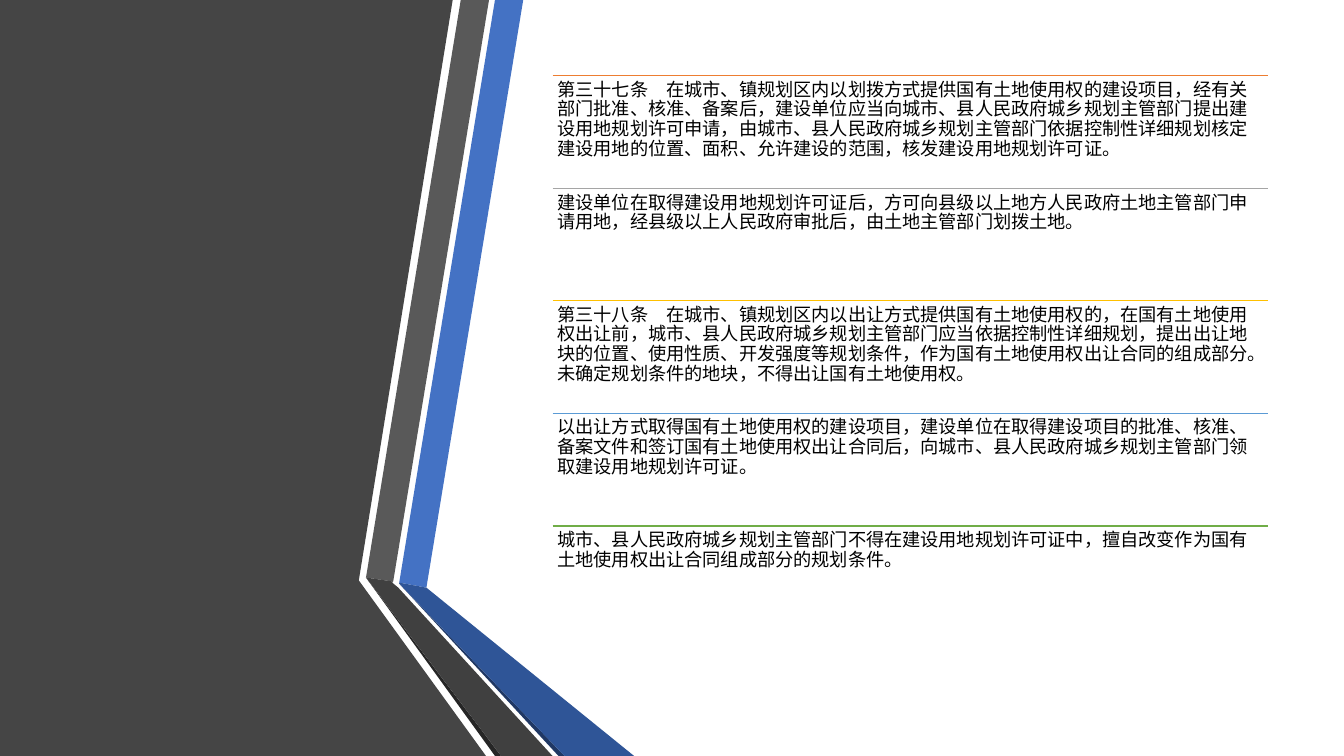
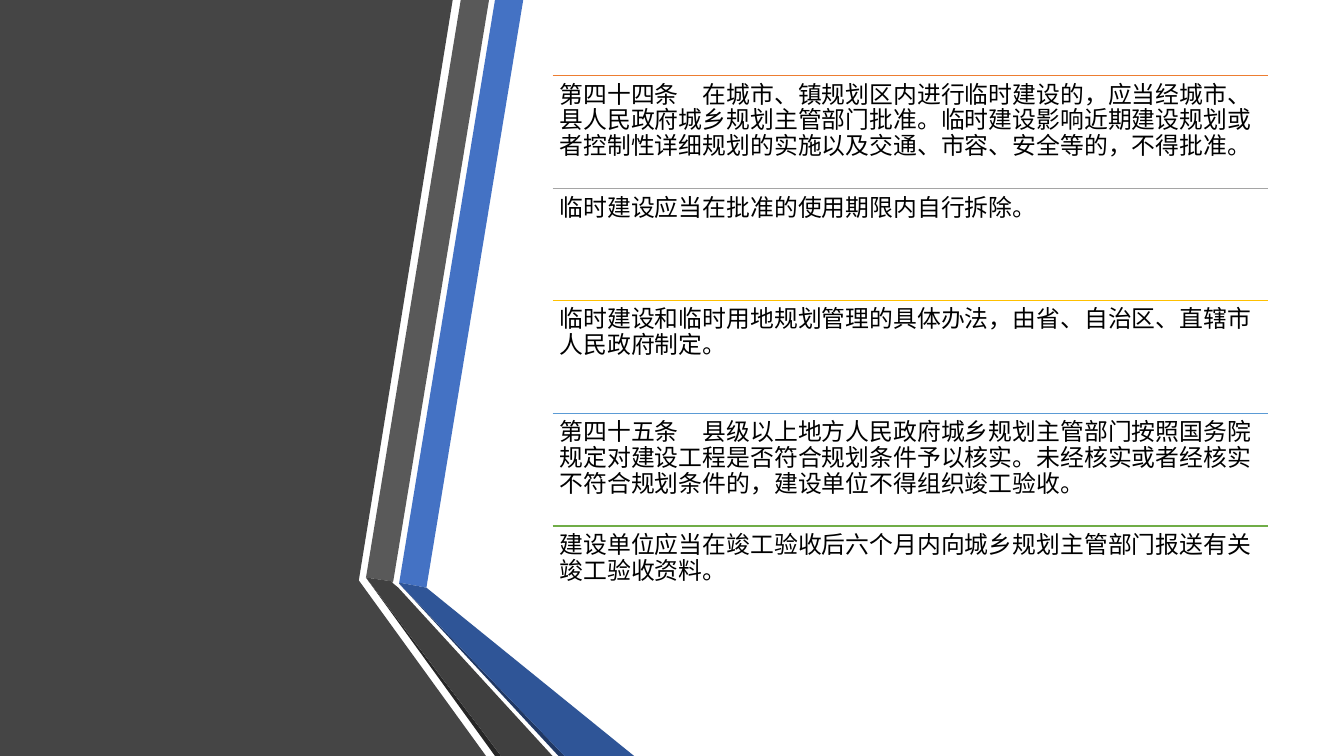
from lxml import etree
from pptx import Presentation
from pptx.dml.color import RGBColor
from pptx.enum.shapes import MSO_CONNECTOR
from pptx.enum.text import MSO_ANCHOR, PP_ALIGN
from pptx.oxml.ns import qn
from pptx.util import Pt

PX = 9144
STRAIGHT = MSO_CONNECTOR.STRAIGHT
TOP = MSO_ANCHOR.TOP
LEFT = PP_ALIGN.LEFT

SLIDE_W, SLIDE_H = 1333, 750
FONT = "Noto Sans CJK SC"
BLANK_LAYOUT = 6

COLORS = {
    "panel": "454545",
    "blue": "4472C4",
    "gray": "595959",
    "gray_edge": "262626",
    "blue_edge": "203864",
    "blue_fold": "2F5597",
    "gray_fold": "404040",
    "text": "000000",
    "orange": "ED7D31",
    "silver": "A5A5A5",
    "gold": "FFC000",
    "sky": "5B9BD5",
    "green": "70AD47",
}

RIBBONS = [
    ("panel", [(0, 0), (449, 0), (356, 575), (356, 576), (482, 750), (0, 750)]),
    ("blue", [(396, 578), (423, 583), (519, 0), (491, 0)]),
    ("gray", [(485, 0), (457, 0), (363, 573), (390, 577)]),
    ("gray_edge", [(363, 573), (491, 750), (497, 750)]),
    ("blue_edge", [(396, 579), (554, 750), (560, 750)]),
    ("blue_fold", [(396, 579), (560, 750), (629, 750), (423, 583), (396, 578)]),
    ("gray_fold", [(548, 750), (395, 583), (389, 578), (390, 577), (363, 573), (497, 750)]),
]

RULES = ["orange", "silver", "gold", "sky", "green"]
ROW_X, ROW_Y, ROW_W, ROW_H = 548, 75, 710, 112
ROW_PITCH = 111.7

LAND_USE = [
    "第三十七条　在城市、镇规划区内以划拨方式提供国有土地使用权的建设项目，经有关部门批准、核准、备案后，"
    "建设单位应当向城市、县人民政府城乡规划主管部门提出建设用地规划许可申请，由城市、县人民政府城乡规划主管部门"
    "依据控制性详细规划核定建设用地的位置、面积、允许建设的范围，核发建设用地规划许可证。",
    "建设单位在取得建设用地规划许可证后，方可向县级以上地方人民政府土地主管部门申请用地，"
    "经县级以上人民政府审批后，由土地主管部门划拨土地。",
    "第三十八条　在城市、镇规划区内以出让方式提供国有土地使用权的，在国有土地使用权出让前，"
    "城市、县人民政府城乡规划主管部门应当依据控制性详细规划，提出出让地块的位置、使用性质、开发强度等规划条件，"
    "作为国有土地使用权出让合同的组成部分。未确定规划条件的地块，不得出让国有土地使用权。",
    "以出让方式取得国有土地使用权的建设项目，建设单位在取得建设项目的批准、核准、备案文件和"
    "签订国有土地使用权出让合同后，向城市、县人民政府城乡规划主管部门领取建设用地规划许可证。",
    "城市、县人民政府城乡规划主管部门不得在建设用地规划许可证中，"
    "擅自改变作为国有土地使用权出让合同组成部分的规划条件。",
]

TEMPORARY_WORKS = [
    "第四十四条　在城市、镇规划区内进行临时建设的，应当经城市、县人民政府城乡规划主管部门批准。"
    "临时建设影响近期建设规划或者控制性详细规划的实施以及交通、市容、安全等的，不得批准。",
    "临时建设应当在批准的使用期限内自行拆除。",
    "临时建设和临时用地规划管理的具体办法，由省、自治区、直辖市人民政府制定。",
    "第四十五条　县级以上地方人民政府城乡规划主管部门按照国务院规定对建设工程是否符合规划条件予以核实。"
    "未经核实或者经核实不符合规划条件的，建设单位不得组织竣工验收。",
    "建设单位应当在竣工验收后六个月内向城乡规划主管部门报送有关竣工验收资料。",
]


class Deck:
    """Holds the shared style and the slide being drawn."""

    def __init__(self):
        self.prs = Presentation()
        self.prs.slide_width = SLIDE_W * PX
        self.prs.slide_height = SLIDE_H * PX
        self.s = None

    def color(self, name):
        return RGBColor.from_string(COLORS[name])

    def slide(self):
        self.s = self.prs.slides.add_slide(self.prs.slide_layouts[BLANK_LAYOUT])
        for fill, points in RIBBONS:
            self.polygon(fill, points)

    def polygon(self, fill, points):
        (x, y), *rest = points
        builder = self.s.shapes.build_freeform(x, y, scale=PX)
        builder.add_line_segments(rest, close=True)
        sp = builder.convert_to_shape()
        sp.shadow.inherit = False
        sp.fill.solid()
        sp.fill.fore_color.rgb = self.color(fill)
        sp.line.fill.background()

    def rule(self, x, y, w, color):
        line = self.s.shapes.add_connector(STRAIGHT, x * PX, y * PX, (x + w) * PX, y * PX)
        line.line.color.rgb = self.color(color)
        line.line.width = Pt(1)
        etree.SubElement(line._element.spPr, qn("a:effectLst"))

    def text(self, x, y, w, h, words, size, inset):
        sp = self.s.shapes.add_textbox(x * PX, y * PX, w * PX, h * PX)
        tf = sp.text_frame
        tf.word_wrap = True
        tf.vertical_anchor = TOP
        tf.margin_left = tf.margin_right = tf.margin_top = tf.margin_bottom = inset * PX
        p = tf.paragraphs[0]
        p.alignment = LEFT
        p.line_spacing = 0.9
        r = p.add_run()
        r.text = words
        r.font.size = Pt(size)
        r.font.color.rgb = self.color("text")
        r.font.name = FONT
        etree.SubElement(r._r.get_or_add_rPr(), qn("a:ea"), typeface=FONT)

    def articles(self, paragraphs, size, inset):
        for i, (color, words) in enumerate(zip(RULES, paragraphs)):
            y = round(ROW_Y + i * ROW_PITCH)
            self.rule(ROW_X, y, ROW_W, color)
            self.text(ROW_X, y, ROW_W, ROW_H, words, size, inset)


def main():
    deck = Deck()
    for paragraphs, size, inset in [(LAND_USE, 13, 5), (TEMPORARY_WORKS, 17, 7)]:
        deck.slide()
        deck.articles(paragraphs, size, inset)
    deck.prs.save("out.pptx")


if __name__ == "__main__":
    main()
